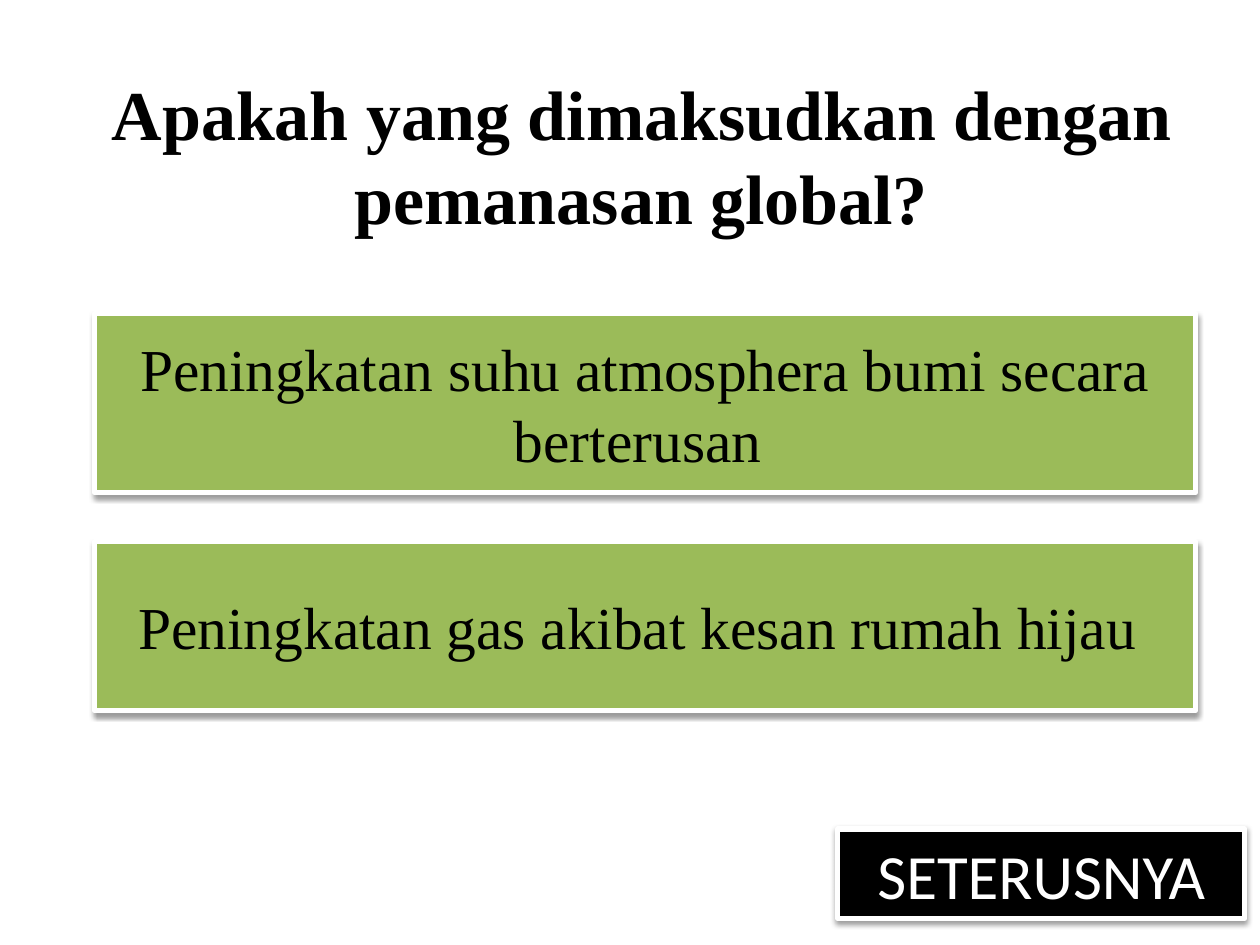
from dataclasses import dataclass

from lxml import etree
from pptx import Presentation
from pptx.dml.color import RGBColor
from pptx.enum.shapes import MSO_SHAPE
from pptx.enum.text import MSO_ANCHOR, PP_ALIGN
from pptx.oxml.ns import qn
from pptx.util import Inches, Pt

BUTTON = MSO_SHAPE.ACTION_BUTTON_CUSTOM
MIDDLE = MSO_ANCHOR.MIDDLE
CENTER = PP_ALIGN.CENTER

BLACK = RGBColor(0x00, 0x00, 0x00)
WHITE = RGBColor(0xFF, 0xFF, 0xFF)
GREEN = RGBColor(0x9B, 0xBB, 0x59)

SERIF = "Times New Roman"
SANS = "Calibri"


@dataclass(frozen=True)
class Label:
    text: str
    size: int
    font: str = SERIF
    color: RGBColor = BLACK
    bold: bool = False


@dataclass(frozen=True)
class Button:
    left: float
    top: float
    width: float
    height: float
    fill: RGBColor
    label: Label


TITLE = Label("Apakah yang dimaksudkan dengan pemanasan global?", 40, bold=True)
BUTTONS = (
    Button(0.75, 2.49, 8.74, 1.42, GREEN,
           Label("Peningkatan suhu atmosphera bumi secara berterusan ", 34)),
    Button(0.75, 4.3, 8.74, 1.34, GREEN,
           Label("Peningkatan gas akibat kesan rumah hijau ", 34)),
    Button(6.65, 6.58, 3.23, 0.71, BLACK,
           Label("SETERUSNYA", 36, SANS, WHITE)),
)


def write_label(sp, label: Label) -> None:
    tf = sp.text_frame
    tf.word_wrap = True
    tf.vertical_anchor = MIDDLE
    p = tf.paragraphs[0]
    p.alignment = CENTER
    r = p.add_run()
    r.text = label.text
    r.font.name = label.font
    r.font.size = Pt(label.size)
    r.font.bold = label.bold
    r.font.color.rgb = label.color


def add_drop_shadow(sp) -> None:
    """Give the shape a soft black shadow falling straight down."""
    sp.shadow.inherit = False
    effects = sp._element.spPr.find(qn("a:effectLst"))
    shadow = etree.SubElement(
        effects, qn("a:outerShdw"), blurRad=str(Pt(3.1)), dist=str(Pt(1.6)),
        dir="5400000", rotWithShape="0")
    color = etree.SubElement(shadow, qn("a:srgbClr"), val=str(BLACK))
    etree.SubElement(color, qn("a:alpha"), val="38000")


def add_button(slide, button: Button) -> None:
    sp = slide.shapes.add_shape(
        BUTTON, Inches(button.left), Inches(button.top),
        Inches(button.width), Inches(button.height))
    sp.fill.solid()
    sp.fill.fore_color.rgb = button.fill
    sp.line.color.rgb = WHITE
    sp.line.width = Pt(3)
    add_drop_shadow(sp)
    write_label(sp, button.label)


def main() -> None:
    prs = Presentation()
    prs.slide_width = Inches(10)
    prs.slide_height = Inches(7.5)
    slide = prs.slides.add_slide(prs.slide_layouts[6])

    title = slide.shapes.add_textbox(
        Inches(0.59), Inches(0.6), Inches(9), Inches(1.25))
    write_label(title, TITLE)
    for button in BUTTONS:
        add_button(slide, button)

    prs.save("out.pptx")


if __name__ == "__main__":
    main()
